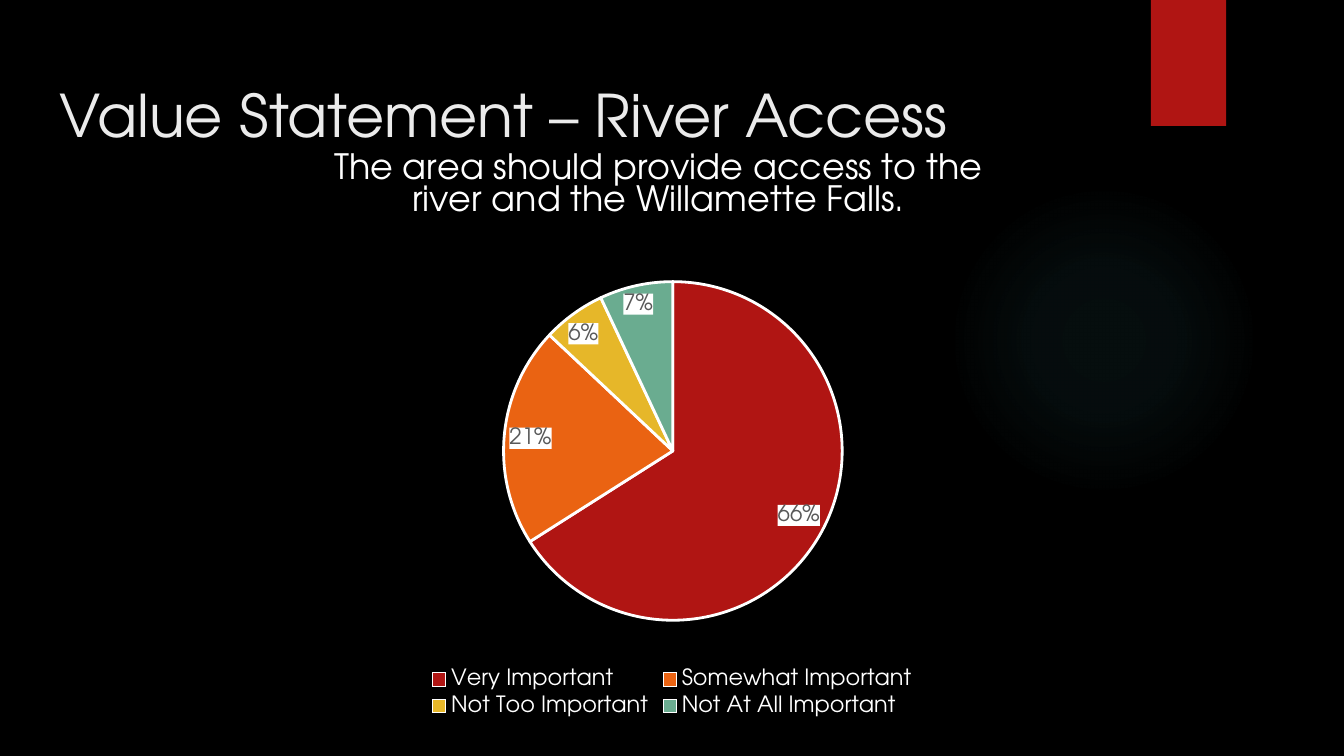
from lxml import etree
from pptx import Presentation
from pptx.chart.data import CategoryChartData
from pptx.dml.color import RGBColor
from pptx.enum.chart import XL_CHART_TYPE as ChartType
from pptx.enum.chart import XL_LABEL_POSITION as LabelPosition
from pptx.enum.chart import XL_LEGEND_POSITION as LegendPosition
from pptx.enum.shapes import MSO_SHAPE as Shape
from pptx.enum.text import MSO_ANCHOR as Anchor
from pptx.oxml import parse_xml
from pptx.oxml.ns import nsdecls, qn
from pptx.util import Inches, Pt

WIDTH = 10
HEIGHT = WIDTH * 9 / 16
FONT = "TeX Gyre Adventor"
WHITE = "FFFFFF"
RED = "B01513"
ANSWERS = [
    ("Very Important", 66, RED),
    ("Somewhat Important", 21, "EA6312"),
    ("Not Too Important", 6, "E6B729"),
    ("Not At All Important", 7, "6AAC90"),
]


def color(value):
    return RGBColor.from_string(value)


def manual_layout(parent, before, target=None, **percents):
    """Fix a chart part at percents of the chart area."""
    for old in parent.findall(qn("c:layout")):
        parent.remove(old)
    layout = etree.Element(qn("c:layout"))
    manual = etree.SubElement(layout, qn("c:manualLayout"))
    values = {"layoutTarget": target} if target else {}
    values.update(xMode="edge", yMode="edge")
    values.update((name, percent / 100) for name, percent in percents.items())
    for name, value in values.items():
        etree.SubElement(manual, qn(f"c:{name}")).set("val", str(value))
    parent.find(qn(before)).addprevious(layout)


class SlideBuilder:
    """Style and current slide; areas are percents of the slide's size."""

    def __init__(self, presentation):
        self.slide = presentation.slides.add_slide(presentation.slide_layouts[6])
        fill = self.slide.background.fill
        fill.solid()
        fill.fore_color.rgb = color("000000")

    def box(self, left, top, width, height):
        return (Inches(left * WIDTH / 100), Inches(top * HEIGHT / 100),
                Inches(width * WIDTH / 100), Inches(height * HEIGHT / 100))

    def style(self, font, size, value):
        font.name, font.size, font.bold = FONT, Pt(size), False
        font.color.rgb = color(value)

    def shape(self, kind, area, fill):
        shape = self.slide.shapes.add_shape(kind, *self.box(*area))
        shape.shadow.inherit = False
        shape.fill.solid()
        shape.fill.fore_color.rgb = color(fill)
        shape.line.fill.background()
        return shape

    def glow(self, area, fill, stops):
        shape = self.shape(Shape.OVAL, area, fill)
        marks = "".join(
            f'<a:gs pos="{place * 1000}"><a:srgbClr val="{fill}">'
            f'<a:alpha val="{alpha * 1000}"/></a:srgbClr></a:gs>'
            for place, alpha in stops)
        gradient = parse_xml(
            f'<a:gradFill {nsdecls("a")} rotWithShape="1"><a:gsLst>{marks}</a:gsLst>'
            '<a:path path="circle"><a:fillToRect l="50000" t="50000" r="50000" '
            'b="50000"/></a:path></a:gradFill>')
        properties = shape.element.spPr
        properties.replace(properties.find(qn("a:solidFill")), gradient)

    def ribbon(self, area, fill):
        shape = self.shape(Shape.RECTANGLE, area, fill)
        shape.element.spPr.find(qn("a:effectLst")).append(parse_xml(
            f'<a:outerShdw {nsdecls("a")} blurRad="{Pt(3)}" dist="{Pt(2)}" '
            'dir="5400000" rotWithShape="0"><a:srgbClr val="000000">'
            '<a:alpha val="45000"/></a:srgbClr></a:outerShdw>'))

    def text(self, area, words, size, value):
        frame = self.slide.shapes.add_textbox(*self.box(*area)).text_frame
        frame.word_wrap = True
        frame.vertical_anchor = Anchor.TOP
        frame.margin_left = frame.margin_right = Inches(0.1)
        frame.margin_top = frame.margin_bottom = Inches(0.1)
        run = frame.paragraphs[0].add_run()
        run.text = words
        self.style(run.font, size, value)

    def pie(self, area, title, answers):
        data = CategoryChartData()
        data.categories = [name for name, _, _ in answers]
        data.add_series("Series 1", [share for _, share, _ in answers])
        chart = self.slide.shapes.add_chart(
            ChartType.PIE, *self.box(*area), data).chart
        self.style(chart.font, 10, WHITE)

        # Heading inside the chart
        chart.has_title = True
        run = chart.chart_title.text_frame.paragraphs[0].add_run()
        run.text = title
        self.style(run.font, 18.7, WHITE)
        manual_layout(chart.chart_title._element, "c:overlay", x=11.6, y=4.4)

        # Legend below
        chart.has_legend = True
        chart.legend.position = LegendPosition.BOTTOM
        chart.legend.include_in_layout = False
        self.style(chart.legend.font, 12, WHITE)

        # Slices
        plot = chart.plots[0]
        plot.vary_by_categories = True
        manual_layout(plot._element.getparent(), "c:pieChart", "inner",
                      x=31.2, y=27.2, w=37.8, h=56)
        for index, (_, _, fill) in enumerate(answers):
            look = plot.series[0].points[index].format
            look.fill.solid()
            look.fill.fore_color.rgb = color(fill)
            look.line.color.rgb = color(WHITE)
            look.line.width = Pt(1.5)

        # Percent labels on white
        labels = plot.series[0].data_labels
        labels.show_percentage = True
        labels.show_value = False
        labels.number_format, labels.number_format_is_linked = "0%", False
        labels.position = LabelPosition.BEST_FIT
        self.style(labels.font, 12, "595959")
        labels._element.find(qn("c:txPr")).addprevious(parse_xml(
            f'<c:spPr {nsdecls("c", "a")}><a:solidFill><a:srgbClr val="{WHITE}"/>'
            '</a:solidFill></c:spPr>'))


def main():
    presentation = Presentation()
    presentation.slide_width, presentation.slide_height = Inches(WIDTH), Inches(HEIGHT)
    builder = SlideBuilder(presentation)

    # Background decoration
    builder.glow((70.6, 24.5, 23.1, 41.1), "50B9C1", [(0, 7), (36, 6), (69, 0)])
    builder.ribbon((85.63, 0, 5.6, 16.67), RED)

    # Title and survey result
    builder.text((3.45, 8.7, 93.2, 11.2), "Value Statement – River Access",
                 31.5, "EBEBEB")
    builder.pie((16.67, 15.5, 66.67, 80),
                "The area should provide access to the river and the Willamette Falls.",
                ANSWERS)
    presentation.save("out.pptx")


if __name__ == "__main__":
    main()
